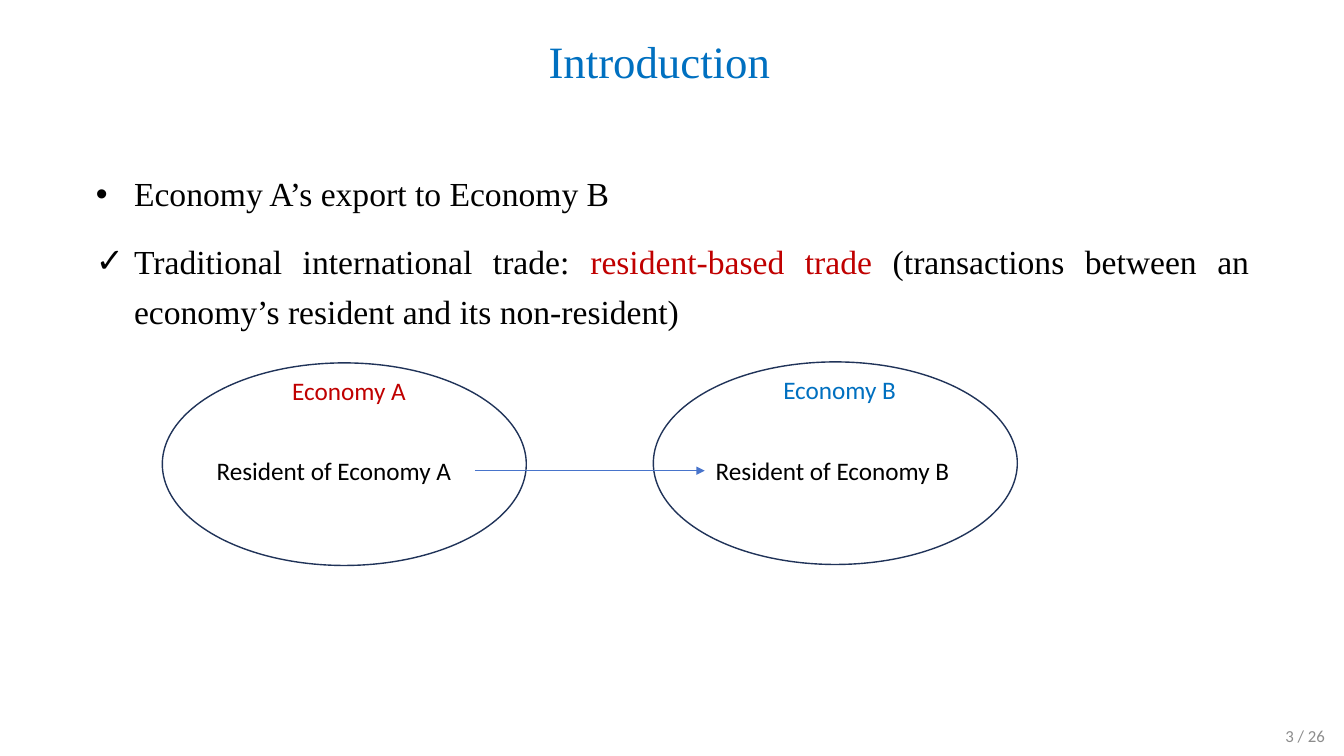
from dataclasses import dataclass

from lxml import etree
from pptx import Presentation
from pptx.dml.color import RGBColor
from pptx.enum.shapes import MSO_CONNECTOR, MSO_SHAPE
from pptx.enum.text import MSO_ANCHOR, MSO_AUTO_SIZE, PP_ALIGN
from pptx.oxml.ns import qn
from pptx.util import Inches, Pt

ELLIPSE = MSO_SHAPE.OVAL
STRAIGHT = MSO_CONNECTOR.STRAIGHT
LEFT, CENTER, RIGHT, JUSTIFY = PP_ALIGN.LEFT, PP_ALIGN.CENTER, PP_ALIGN.RIGHT, PP_ALIGN.JUSTIFY
TOP, MIDDLE = MSO_ANCHOR.TOP, MSO_ANCHOR.MIDDLE
NO_AUTOFIT = MSO_AUTO_SIZE.NONE

SERIF, SANS = "Times New Roman", "Calibri"
COLORS = {
    "black": "000000",
    "red": "C00000",
    "blue": "0070C0",
    "gray": "8C8C8C",
    "outline": "203359",
    "arrow": "4874CB",
}
BULLET_INDENT = Inches(0.38)
BULLET_FORMAT = {
    "alignment": JUSTIFY,
    "line_spacing": 1.25,
    "space_before": Pt(6),
    "space_after": Pt(6),
}


@dataclass
class Economy:
    name: str
    color: str
    left: float
    top: float
    resident_left: float


@dataclass
class Bullet:
    mark: str
    runs: list[tuple[str, str]]


ECONOMIES = [
    Economy("Economy A", "red", 1.61, 3.6, 2.05),
    Economy("Economy B", "blue", 6.48, 3.59, 7),
]
BULLETS = [
    Bullet("•", [("Economy A’s export to Economy B", "black")]),
    Bullet("✓", [
        ("Traditional international trade: ", "black"),
        ("resident-based trade ", "red"),
        ("(transactions between an economy’s resident and its non-resident)", "black"),
    ]),
]


def rgb(color: str) -> RGBColor:
    return RGBColor.from_string(COLORS[color])


def place(shape, left: float, top: float, width: float, height: float) -> None:
    box = {"left": left, "top": top, "width": width, "height": height}
    for side, length in box.items():
        setattr(shape, side, Inches(length))


def add_run(paragraph, text: str, size: int, font: str, color: str) -> None:
    run = paragraph.add_run()
    run.text = text
    for attribute, value in {"size": Pt(size), "name": font}.items():
        setattr(run.font, attribute, value)
    run.font.color.rgb = rgb(color)


def add_label(slide, text: str, left: float, top: float, width: float, size: int = 18,
              color: str = "black", align=LEFT, anchor=TOP) -> None:
    label = slide.shapes.add_textbox(Inches(left), Inches(top), Inches(width), Inches(0.4))
    frame = label.text_frame
    frame.word_wrap = True
    frame.vertical_anchor = anchor
    frame.paragraphs[0].alignment = align
    add_run(frame.paragraphs[0], text, size, SANS, color)


def add_title(slide, text: str) -> None:
    title = slide.shapes.title
    place(title, 2.13, 0.3, 8.82, 0.67)
    frame = title.text_frame
    frame.auto_size = NO_AUTOFIT
    frame.vertical_anchor = MIDDLE
    heading = frame.paragraphs[0]
    heading.alignment = CENTER
    heading.line_spacing = 0.9
    add_run(heading, text, 32, SERIF, "blue")


def set_bullet(paragraph, mark: str) -> None:
    properties = paragraph._p.get_or_add_pPr()
    properties.set("marL", str(BULLET_INDENT))
    properties.set("indent", str(-BULLET_INDENT))
    etree.SubElement(properties, qn("a:buFont"), typeface="Arial")
    etree.SubElement(properties, qn("a:buChar"), char=mark)


def add_bullets(slide, bullets: list[Bullet]) -> None:
    body = slide.placeholders[1]
    place(body, 0.85, 1.57, 11.64, 2.92)
    frame = body.text_frame
    frame.auto_size = NO_AUTOFIT
    for index, bullet in enumerate(bullets):
        paragraph = frame.add_paragraph() if index else frame.paragraphs[0]
        for attribute, value in BULLET_FORMAT.items():
            setattr(paragraph, attribute, value)
        set_bullet(paragraph, bullet.mark)
        for text, color in bullet.runs:
            add_run(paragraph, text, 24, SERIF, color)


def add_economy(slide, economy: Economy) -> None:
    border = slide.shapes.add_shape(ELLIPSE, Inches(economy.left), Inches(economy.top),
                                    Inches(3.61), Inches(2.01))
    border.shadow.inherit = False
    border.fill.background()
    border.line.color.rgb = rgb("outline")
    border.line.width = Pt(1)
    add_label(slide, economy.name, economy.left + 1.19, economy.top + 0.07, 1.55,
              color=economy.color)
    add_label(slide, f"Resident of {economy.name}", economy.resident_left, 4.47, 2.74)


def add_export_arrow(slide, start: float, end: float, height: float) -> None:
    arrow = slide.shapes.add_connector(STRAIGHT, Inches(start), Inches(height),
                                       Inches(end), Inches(height))
    arrow.line.color.rgb = rgb("arrow")
    arrow.line.width = Pt(1)
    etree.SubElement(arrow.line._get_or_add_ln(), qn("a:tailEnd"), type="triangle")
    etree.SubElement(arrow._element.spPr, qn("a:effectLst"))


def main() -> None:
    presentation = Presentation()
    presentation.slide_width = Inches(13.33)
    presentation.slide_height = Inches(7.5)
    slide = presentation.slides.add_slide(presentation.slide_layouts[1])

    add_title(slide, "Introduction")
    add_bullets(slide, BULLETS)
    for economy in ECONOMIES:
        add_economy(slide, economy)
    add_export_arrow(slide, 4.71, 6.99, 4.67)
    add_label(slide, "3 / 26", 10.24, 7.1, 3, size=12, color="gray", align=RIGHT, anchor=MIDDLE)

    presentation.save("out.pptx")


if __name__ == "__main__":
    main()
